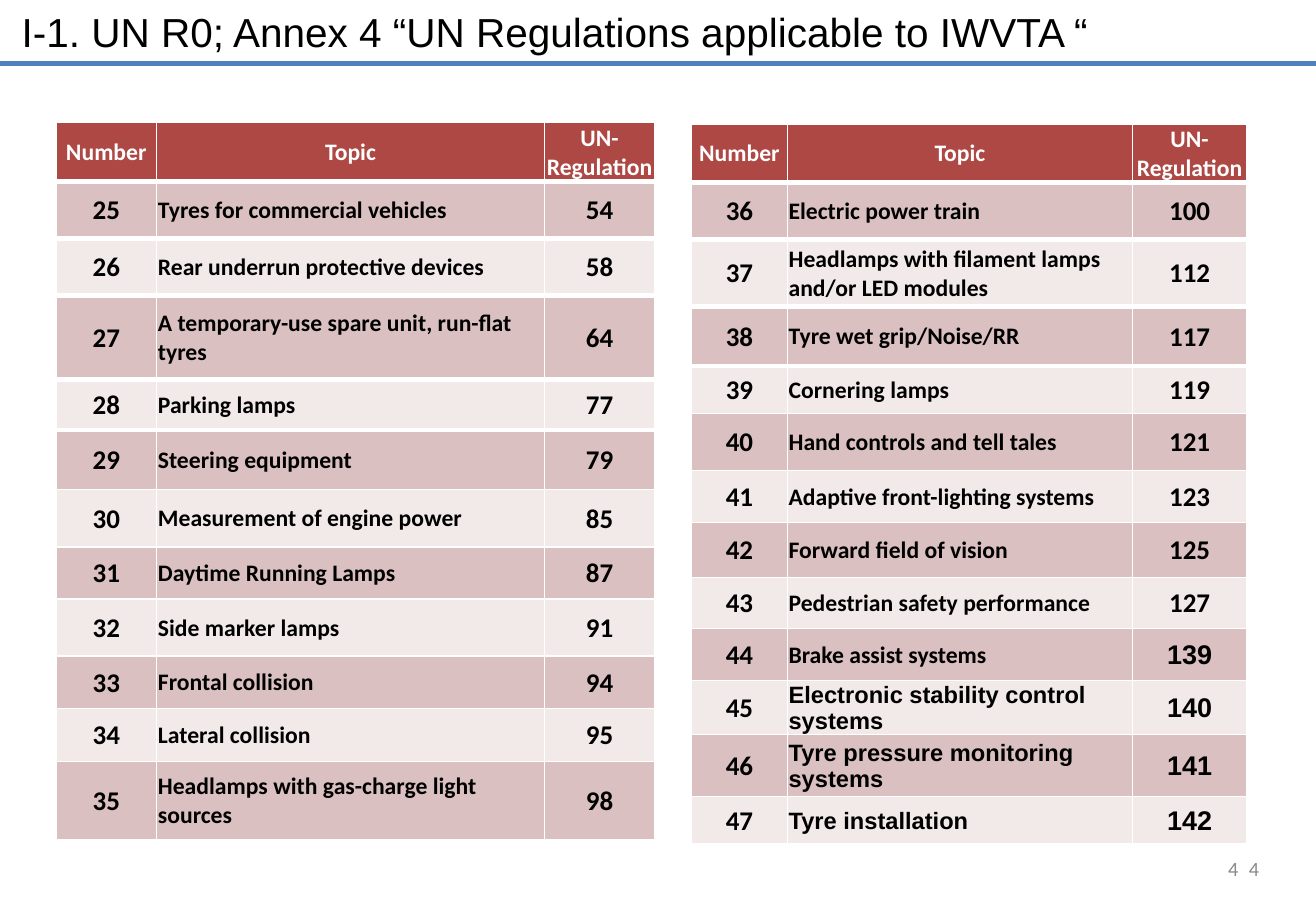
from lxml import etree
from pptx import Presentation
from pptx.dml.color import RGBColor
from pptx.enum.shapes import MSO_CONNECTOR
from pptx.enum.text import MSO_ANCHOR, PP_ALIGN
from pptx.oxml.ns import qn
from pptx.util import Inches, Pt

LEFT, CENTER, RIGHT = PP_ALIGN.LEFT, PP_ALIGN.CENTER, PP_ALIGN.RIGHT
MIDDLE, TOP = MSO_ANCHOR.MIDDLE, MSO_ANCHOR.TOP
STRAIGHT = MSO_CONNECTOR.STRAIGHT
BLACK, WHITE, GREY, BLUE = "000000", "FFFFFF", "898989", "4F81BD"
HEADER_RED, DARK_BAND, LIGHT_BAND = "AE4845", "DAC0C0", "F2E9E9"
HEADINGS = ("Number", "Topic", "UN-Regulation")


def color(value):
    return RGBColor.from_string(value)


def write(frame, text, size, font, ink, align, bold=False):
    para = frame.paragraphs[0]
    para.alignment = align
    span = para.add_run()
    span.text = text
    for name, value in {"size": Pt(size), "name": font, "bold": bold}.items():
        setattr(span.font, name, value)
    span.font.color.rgb = color(ink)


# Each row: topic, regulation, height, bottom border width
regulation_tables = [
    {
        "place": (0.46, 1.01, 4.92, 5.91),
        "columns": (0.83, 3.19, 0.91),
        "first_number": 25,
        "rows": [
            ("Tyres for commercial vehicles", 54, 0.47, 3),
            ("Rear underrun protective devices", 58, 0.47, 3),
            ("A temporary-use spare unit, run-flat tyres", 64, 0.69, 3),
            ("Parking lamps", 77, 0.42, 3),
            ("Steering equipment", 79, 0.49, 1),
            ("Measurement of engine power", 85, 0.47, 1),
            ("Daytime Running Lamps", 87, 0.43, 1),
            ("Side marker lamps", 91, 0.47, 1),
            ("Frontal collision", 94, 0.43, 1),
            ("Lateral collision", 95, 0.44, 1),
            ("Headlamps with gas-charge light sources", 98, 0.64, 1),
        ],
    },
    {
        "place": (5.69, 1.02, 4.57, 5.88),
        "columns": (0.79, 2.84, 0.94),
        "first_number": 36,
        "rows": [
            ("Electric power train", 100, 0.47, 3),
            ("Headlamps with filament lamps and/or LED modules", 112, 0.55, 3),
            ("Tyre wet grip/Noise/RR", 117, 0.49, 3),
            ("Cornering lamps", 119, 0.39, 0.75),
            ("Hand controls and tell tales", 121, 0.47, 0.75),
            ("Adaptive front-lighting systems", 123, 0.43, 0.75),
            ("Forward field of vision", 125, 0.45, 0.75),
            ("Pedestrian safety performance", 127, 0.42, 0.75),
            ("Brake assist systems", 139, 0.43, 1),
            ("Electronic stability control systems", 140, 0.39, 1),
            ("Tyre pressure monitoring systems", 141, 0.51, 1),
            ("Tyre installation", 142, 0.39, 1),
        ],
    },
]

deck = Presentation()
deck.slide_width, deck.slide_height = Inches(10.83), Inches(7.5)
page = deck.slides.add_slide(deck.slide_layouts[6])

title_rule = page.shapes.add_connector(
    STRAIGHT, Inches(0), Inches(0.52), Inches(10.83), Inches(0.52))
title_rule.line.color.rgb = color(BLUE)
title_rule.line.width = Pt(3)
etree.SubElement(title_rule.element.spPr, qn("a:effectLst"))

for listing in regulation_tables:
    rows = [(*HEADINGS, 0.48, 3)]
    for number, row in enumerate(listing["rows"], listing["first_number"]):
        rows.append((number, *row))
    table = page.shapes.add_table(
        len(rows), len(HEADINGS), *map(Inches, listing["place"])).table
    table.first_row = table.horz_banding = False
    for column, width in zip(table.columns, listing["columns"]):
        column.width = Inches(width)

    top_border = 1
    for index, (*texts, height, bottom_border) in enumerate(rows):
        table.rows[index].height = Inches(height)
        is_header = index == 0
        band = HEADER_RED if is_header else DARK_BAND if index % 2 else LIGHT_BAND
        for position, text in enumerate(texts):
            cell = table.cell(index, position)
            for side in ("left", "right", "top"):
                setattr(cell, f"margin_{side}", Inches(0.01))
            cell.margin_bottom = Inches(0)
            cell.vertical_anchor = MIDDLE

            borders = {"lnL": 1, "lnR": 1, "lnT": top_border, "lnB": bottom_border}
            for tag, width in borders.items():
                edge = etree.SubElement(
                    cell._tc.get_or_add_tcPr(), qn(f"a:{tag}"), w=str(Pt(width)))
                paint = etree.SubElement(edge, qn("a:solidFill"))
                etree.SubElement(paint, qn("a:srgbClr"), val=WHITE)
            cell.fill.solid()
            cell.fill.fore_color.rgb = color(band)

            is_topic = position == 1
            # The newest regulations are set in Arial
            arial_from = {1: 140, 2: 139}.get(position)
            use_arial = not is_header and arial_from and texts[2] >= arial_from
            write(cell.text_frame, str(text),
                  14 if is_header or is_topic else 16,
                  "Arial" if use_arial else "Calibri",
                  WHITE if is_header else BLACK,
                  LEFT if is_topic and not is_header else CENTER, bold=True)
        top_border = bottom_border

labels = [
    ((0.08, 0.01, 10.39, 0.5), TOP,
     ("I-1. UN R0; Annex 4 “UN Regulations applicable to IWVTA “",
      24, "Arial", BLACK, LEFT)),
    ((7.93, 6.95, 2.53, 0.4), MIDDLE, ("4", 12, "Calibri", GREY, RIGHT)),
    ((7.76, 6.95, 2.53, 0.4), MIDDLE, ("4", 12, "Calibri", GREY, RIGHT)),
]
for place, anchor, content in labels:
    frame = page.shapes.add_textbox(*map(Inches, place)).text_frame
    frame.word_wrap = True
    frame.vertical_anchor = anchor
    write(frame, *content)

deck.save("out.pptx")
